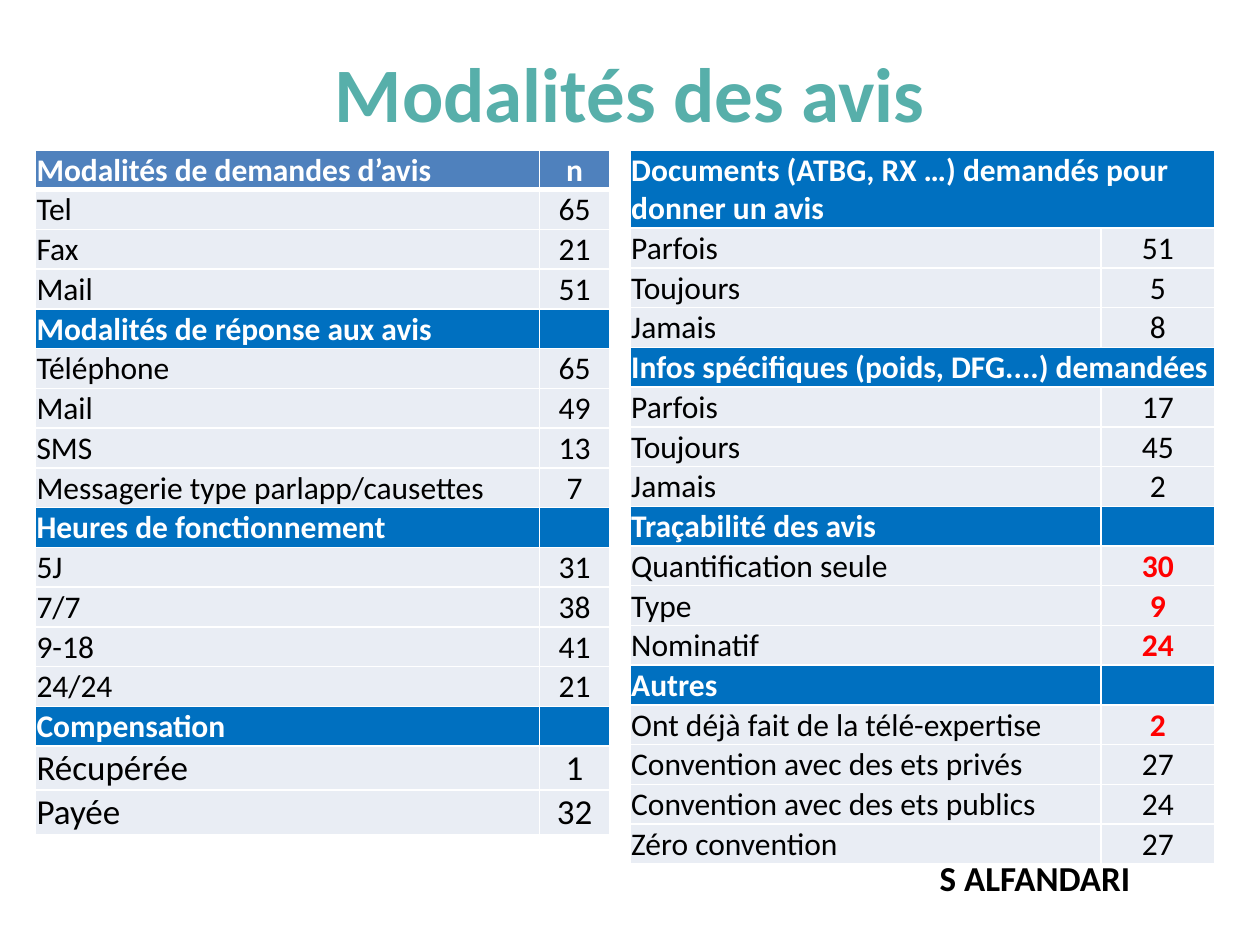
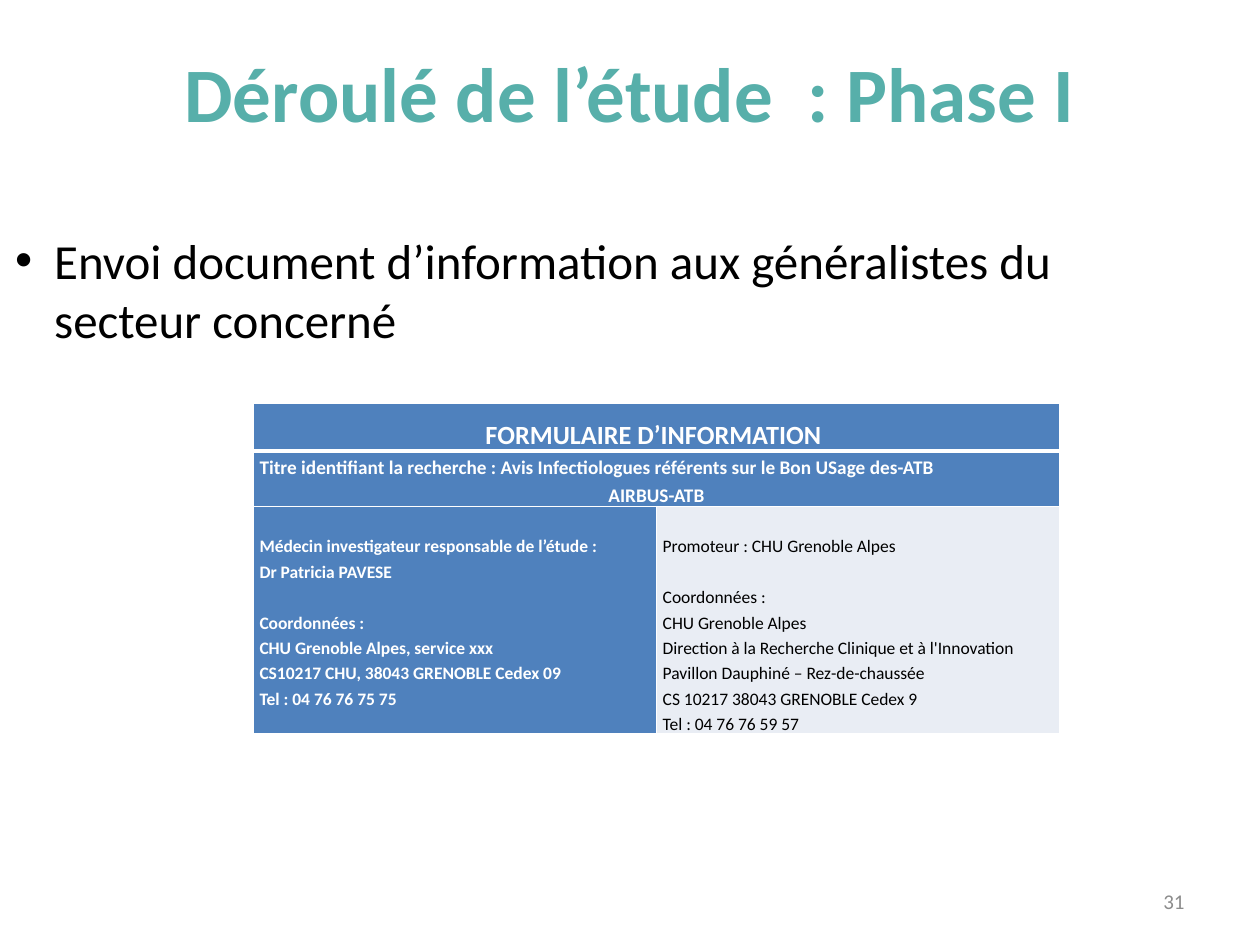
from pptx import Presentation
from pptx.dml.color import RGBColor as RGB
from pptx.enum.text import MSO_ANCHOR as Anchor, MSO_AUTO_SIZE as Auto, PP_ALIGN as Align
from pptx.oxml.ns import qn
from pptx.util import Inches, Pt
from lxml.etree import SubElement as Sub

FONT = "Calibri"
HUES = {"title": "57AFAA", "head": "4F81BD", "band": "0070C0", "row": "E9EDF4",
        "white": "FFFFFF", "ink": "000000", "red": "FF0000", "grey": "8C8C8C"}
TIGHT = (0.01, 0.01, 0.01, 0)
FORM = (0.05, 0, 0.05, 0)

# Groups: heading, heading mark (None spans both columns), rows of
# label, count and optional style
ASKS = [
    ("Modalités de demandes d’avis", "n",
     [("Tel", 65), ("Fax", 21), ("Mail", 51)]),
    ("Modalités de réponse aux avis", "",
     [("Téléphone", 65), ("Mail", 49), ("SMS", 13),
      ("Messagerie type parlapp/causettes", 7)]),
    ("Heures de fonctionnement", "",
     [("5J", 31), ("7/7", 38), ("9-18", 41), ("24/24", 21)]),
    ("Compensation", "", [("Récupérée", 1, "big"), ("Payée", 32, "big")]),
]
DOCS = [
    ("Documents (ATBG, RX …) demandés pour\ndonner un avis", None,
     [("Parfois", 51), ("Toujours", 5), ("Jamais", 8)]),
    ("Infos spécifiques (poids, DFG....) demandées", None,
     [("Parfois", 17), ("Toujours", 45), ("Jamais", 2)]),
    ("Traçabilité des avis", "",
     [("Quantification seule", 30, "red"), ("Type", 9, "red"), ("Nominatif", 24, "red")]),
    ("Autres", "",
     [("Ont déjà fait de la télé-expertise", 2, "red"),
      ("Convention avec des ets privés", 27),
      ("Convention avec des ets publics", 24), ("Zéro convention", 27)]),
]
LEAD = ["Médecin investigateur responsable de l’étude : ", "Dr Patricia PAVESE",
        "Coordonnées :", "CHU Grenoble Alpes, service xxx",
        "CS10217 CHU, 38043 GRENOBLE Cedex 09 ", "Tel : 04 76 76 75 75"]
HOST = ["Promoteur : CHU Grenoble Alpes", "Coordonnées :",
        "CHU Grenoble Alpes\nDirection à la Recherche Clinique et à l'Innovation\n"
        "Pavillon Dauphiné – Rez-de-chaussée\nCS 10217 38043 GRENOBLE Cedex 9",
        "Tel : 04 76 76 59 57"]


def hue(name):
    return RGB.from_string(HUES[name])


def write(par, text, size, color="ink", bold=False, align=None, lead=None):
    """Add text to a paragraph, one run for each line."""
    if align is not None:
        par.alignment = align
    if lead:
        par.line_spacing = lead
    for i, line in enumerate(text.split("\n")):
        if i:
            par.add_line_break()
        run = par.add_run()
        run.text = line
        run.font.name, run.font.size, run.font.bold = FONT, Pt(size), bold
        run.font.color.rgb = hue(color)


def place(shape, left, top, width, height):
    shape.left, shape.top = Inches(left), Inches(top)
    shape.width, shape.height = Inches(width), Inches(height)


def add_title(slide, text):
    title = slide.shapes.title
    place(title, 0.5, 0.3, 9, 0.85)
    frame = title.text_frame
    frame.vertical_anchor, frame.auto_size = Anchor.MIDDLE, Auto.NONE
    write(frame.paragraphs[0], text, 44, "title", True, Align.CENTER)


def add_label(slide, box, text, size, color, bold=False, align=None, anchor=Anchor.TOP):
    frame = slide.shapes.add_textbox(*map(Inches, box)).text_frame
    frame.word_wrap, frame.vertical_anchor = True, anchor
    write(frame.paragraphs[0], text, size, color, bold, align)


def add_list(slide, box, items):
    body = slide.placeholders[1]
    place(body, *box)
    frame = body.text_frame
    frame.auto_size = Auto.NONE
    for i, item in enumerate(items):
        par = frame.add_paragraph() if i else frame.paragraphs[0]
        props = par._p.get_or_add_pPr()
        props.set("marL", str(Inches(0.31)))
        props.set("indent", str(-Inches(0.31)))
        Sub(props, qn("a:buChar")).set("char", "•")
        par.space_before = Pt(0)
        write(par, item, 28)


def add_grid(slide, left, top, cols, rows):
    shape = slide.shapes.add_table(len(rows), len(cols), Inches(left), Inches(top),
                                   Inches(sum(cols)), Inches(sum(rows)))
    grid = shape.table
    grid.first_row = grid.horz_banding = False
    for col, width in zip(grid.columns, cols):
        col.width = Inches(width)
    for row, height in zip(grid.rows, rows):
        row.height = Inches(height)
    return grid


def dress(cell, fill, pad, above=1, below=1, anchor=Anchor.TOP):
    """Set margins, white borders and fill of a cell."""
    cell.margin_left, cell.margin_top, cell.margin_right, cell.margin_bottom = map(Inches, pad)
    cell.vertical_anchor = anchor
    props = cell._tc.get_or_add_tcPr()
    for side, width in (("L", 1), ("R", 1), ("T", above), ("B", below)):
        line = Sub(props, qn("a:ln" + side))
        line.set("w", str(Pt(width)))
        Sub(Sub(line, qn("a:solidFill")), qn("a:srgbClr")).set("val", HUES["white"])
    cell.fill.solid()
    cell.fill.fore_color.rgb = hue(fill)


def add_counts(slide, left, cols, groups):
    """Draw a table of counts under group headings."""
    rows = []
    for head, mark, items in groups:
        rows.append((head, mark, "head"))
        rows += [(item[0], str(item[1]), item[2] if len(item) > 2 else "") for item in items]
    highs = [0.61 if "\n" in text else 0.34 if kind == "big" else 0.31
             for text, _, kind in rows]
    grid = add_grid(slide, left, 1.19, cols, highs)
    thick = rows[0][1] == "n"
    for r, (text, count, kind) in enumerate(rows):
        name, num = grid.cell(r, 0), grid.cell(r, 1)
        head = kind == "head"
        fill = "row" if not head else "head" if count == "n" else "band"
        above, below = 3 if thick and r == 1 else 1, 3 if thick and r == 0 else 1
        dress(name, fill, TIGHT, above, below, Anchor.MIDDLE)
        dress(num, fill, TIGHT, above, below, Anchor.BOTTOM)
        size, ink = 20 if kind == "big" else 18, "white" if head else "ink"
        write(name.text_frame.paragraphs[0], text, size, ink, head)
        if count is None:
            name.merge(num)
        elif count:
            write(num.text_frame.paragraphs[0], count, size,
                  "red" if kind == "red" else ink, head or kind == "red", Align.CENTER)


def add_form(slide):
    """Draw the information form: two full-width rows, then two contacts."""
    grid = add_grid(slide, 2.01, 3.2, [3.2, 3.2], [0.38, 0.43, 1.8])
    for r in range(2):
        for c in range(2):
            dress(grid.cell(r, c), "head", FORM, 3 if r else 1, 1 if r else 3)
        grid.cell(r, 0).merge(grid.cell(r, 1))
    write(grid.cell(0, 0).text_frame.paragraphs[0], "FORMULAIRE D’INFORMATION ",
          15, "white", True, Align.CENTER, 1.5)
    frame = grid.cell(1, 0).text_frame
    write(frame.paragraphs[0], "Titre identifiant la recherche : Avis Infectiologues "
          "référents sur le Bon USage des-ATB", 11, "white", True, Align.JUSTIFY, 1.2)
    write(frame.add_paragraph(), "AIRBUS-ATB", 11, "white", True, Align.CENTER, 1.2)
    # Contacts: one line of space at the top and before the address
    for c, (lines, fill, ink) in enumerate([(LEAD, "head", "white"), (HOST, "row", "ink")]):
        cell = grid.cell(2, c)
        dress(cell, fill, (0.05, 0.2, 0.05, 0))
        for i, line in enumerate(lines):
            par = cell.text_frame.add_paragraph() if i else cell.text_frame.paragraphs[0]
            if line.startswith("Coord"):
                par.space_before = Pt(14.6)
            align = Align.LEFT if "\n" in line else Align.JUSTIFY
            write(par, line, 10, ink, ink == "white", align, 1.2)


def main():
    prs = Presentation()
    prs.slide_width, prs.slide_height = Inches(10), Inches(7.5)

    # Counts of advice methods
    slide = prs.slides.add_slide(prs.slide_layouts[5])
    add_title(slide, "Modalités des avis")
    add_counts(slide, 0.28, [4, 0.56], ASKS)
    add_counts(slide, 5, [3.74, 0.9], DOCS)
    add_label(slide, (7.36, 6.75, 2.82, 0.44), "S ALFANDARI", 20, "ink", True)

    # Study, phase I
    slide = prs.slides.add_slide(prs.slide_layouts[1])
    add_title(slide, "Déroulé de l’étude  : Phase I")
    add_label(slide, (7.17, 6.95, 2.33, 0.4), "31", 12, "grey",
              align=Align.RIGHT, anchor=Anchor.MIDDLE)
    add_list(slide, (0.02, 1.78, 9.45, 1.04),
             ["Envoi document d’information aux généralistes du secteur concerné"])
    add_form(slide)
    prs.save("out.pptx")


if __name__ == "__main__":
    main()
